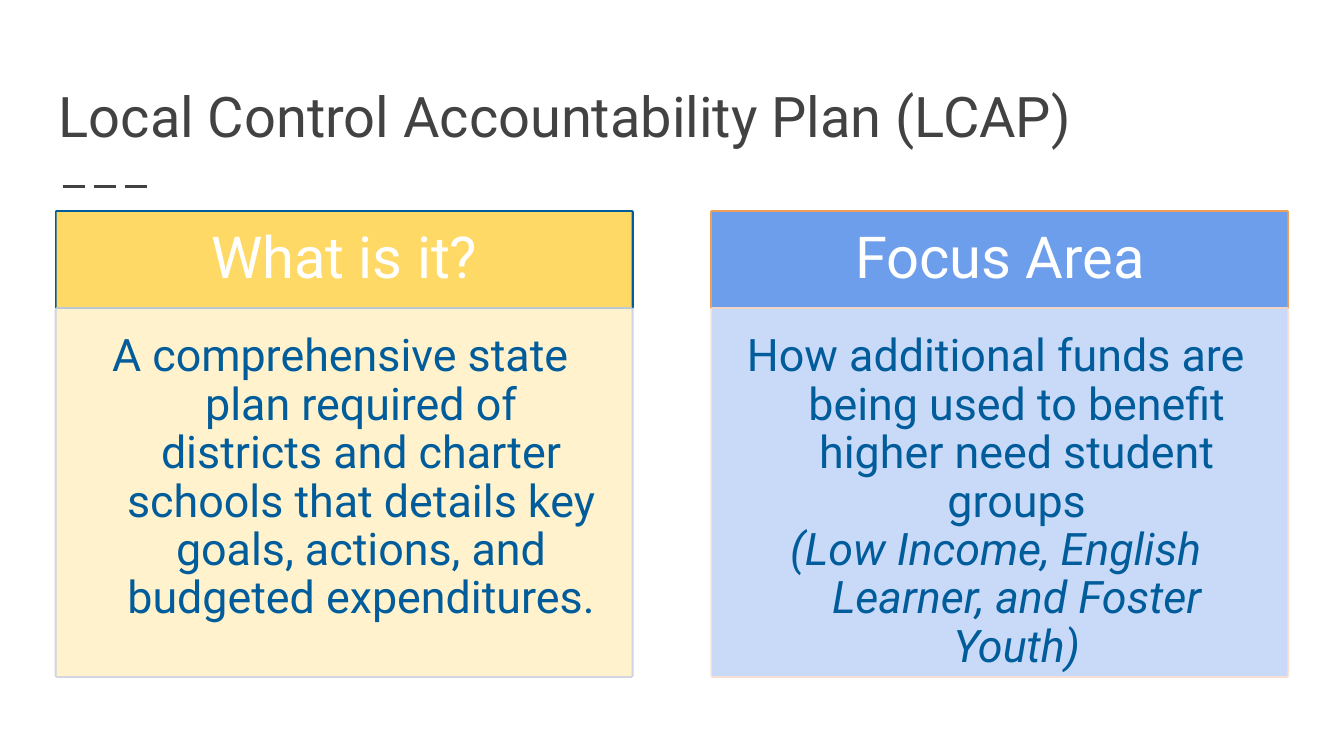
from lxml import etree
from pptx import Presentation
from pptx import util as u
from pptx.dml.color import RGBColor
from pptx.enum import dml, shapes, text
from pptx.oxml.ns import qn

FONT = "Roboto"
GRAY = RGBColor(0x42, 0x42, 0x42)
WHITE = RGBColor(0xFF, 0xFF, 0xFF)
NAVY = RGBColor(0x00, 0x5C, 0x9A)
ORANGE = RGBColor(0xEE, 0xA0, 0x5A)
YELLOW = RGBColor(0xFF, 0xD9, 0x66)
CREAM = RGBColor(0xFF, 0xF2, 0xCC)
MIST = RGBColor(0xC9, 0xD0, 0xDD)
BLUE = RGBColor(0x6D, 0x9E, 0xEB)
PALE_BLUE = RGBColor(0xC9, 0xDA, 0xF8)
PEACH = RGBColor(0xF8, 0xDC, 0xCD)

CARD_WIDTH, CARD_HEIGHT = 10.87, 8.77
HEADER_HEIGHT, BODY_TOP = 1.8, 1.83
INDENT = 0.79


def style_span(span, size, color, italic=None):
    span.font.name = FONT
    span.font.size = u.Pt(size)
    span.font.color.rgb = color
    span.font.italic = italic


def set_margins(frame, left, top, right, bottom):
    frame.margin_left, frame.margin_top = u.Cm(left), u.Cm(top)
    frame.margin_right, frame.margin_bottom = u.Cm(right), u.Cm(bottom)


def set_alpha(fill_format, percent):
    color = fill_format.find(qn("a:solidFill"))[0]
    etree.SubElement(color, qn("a:alpha"), val=str(percent * 1000))


def add_panel(group, box, fill, border, border_alpha=100):
    bounds = [u.Cm(length) for length in box]
    back = group.shapes.add_shape(shapes.MSO_SHAPE.RECTANGLE, *bounds)
    back.shadow.inherit = False
    back.fill.solid()
    back.fill.fore_color.rgb = border
    back.line.color.rgb = border
    back.line.width = u.Pt(2)
    if border_alpha < 100:
        properties = back.fill.fore_color and back.element.spPr
        set_alpha(properties, border_alpha)
        set_alpha(properties.find(qn("a:ln")), border_alpha)

    front = group.shapes.add_shape(shapes.MSO_SHAPE.RECTANGLE, *bounds)
    front.shadow.inherit = False
    front.fill.solid()
    front.fill.fore_color.rgb = fill
    front.line.fill.background()
    front.text_frame.word_wrap = True
    return front.text_frame


def add_paragraphs(frame, lines, size, color):
    frame.text = "\n".join(line for line, italic in lines)
    for para, (line, italic) in zip(frame.paragraphs, lines):
        para.alignment = text.PP_ALIGN.CENTER
        para.line_spacing = 0.9
        style_span(para.runs[0], size, color, italic)


def add_card(page, box, heading, lines, header_colors, body_colors):
    left, top, width, height = box
    group = page.shapes.add_group_shape()

    header = add_panel(group, (left, top, width, HEADER_HEIGHT), *header_colors)
    set_margins(header, 0.61, 0.36, 0.61, 0.36)
    header.vertical_anchor = text.MSO_ANCHOR.MIDDLE
    add_paragraphs(header, [(heading, None)], 31, WHITE)

    body_box = (left, top + BODY_TOP, width, height - BODY_TOP)
    body = add_panel(group, body_box, *body_colors, border_alpha=88)
    set_margins(body, 0.46, 0.46, 0.61, 0.69)
    body.vertical_anchor = text.MSO_ANCHOR.TOP
    add_paragraphs(body, lines, 24, NAVY)
    for para in body.paragraphs:
        para.level = 1
        properties = para._p.get_or_add_pPr()
        properties.set("marL", str(u.Cm(INDENT)))
        properties.set("indent", str(-u.Cm(INDENT)))


def add_heading(page, box, title_text):
    left, top, width, height = box
    title = page.shapes.title
    title.left, title.top = u.Cm(left), u.Cm(top)
    title.width, title.height = u.Cm(width), u.Cm(height)
    frame = title.text_frame
    frame.text = title_text
    frame.word_wrap = True
    frame.auto_size = text.MSO_AUTO_SIZE.NONE
    frame.vertical_anchor = text.MSO_ANCHOR.BOTTOM
    set_margins(frame, 0.25, 0.25, 0.25, 0.25)
    para = frame.paragraphs[0]
    para.alignment = text.PP_ALIGN.LEFT
    style_span(para.runs[0], 30, GRAY)

    rule_left, rule_top = u.Cm(left + 0.33), u.Cm(top + height + 0.46)
    rule = page.shapes.add_connector(
        shapes.MSO_CONNECTOR.STRAIGHT,
        rule_left, rule_top, rule_left + u.Cm(1.7), rule_top)
    rule.line.color.rgb = GRAY
    rule.line.width = u.Pt(1.5)
    rule.line.dash_style = dml.MSO_LINE.LONG_DASH
    etree.SubElement(rule.element.spPr, qn("a:effectLst"))


def main():
    deck = Presentation()
    deck.slide_width, deck.slide_height = u.Cm(25.4), u.Cm(14.29)
    page = deck.slides.add_slide(deck.slide_layouts[5])
    page.background.fill.solid()
    page.background.fill.fore_color.rgb = WHITE

    add_heading(page, (0.86, 1.04, 23.67, 2.03),
                "Local Control Accountability Plan (LCAP)")
    cards = [
        ("What is it?",
         [("A comprehensive state plan required of districts and charter "
           "schools that details key goals, actions, and budgeted "
           "expenditures.", None)],
         (YELLOW, NAVY), (CREAM, MIST)),
        ("Focus Area",
         [("How additional funds are being used to benefit higher need "
           "student groups", None),
          ("(Low Income, English Learner, and Foster Youth)", True)],
         (BLUE, ORANGE), (PALE_BLUE, PEACH)),
    ]
    for index, card in enumerate(cards):
        left = 1.07 + index * 12.39
        add_card(page, (left, 4.01, CARD_WIDTH, CARD_HEIGHT), *card)
    deck.save("out.pptx")


if __name__ == "__main__":
    main()
